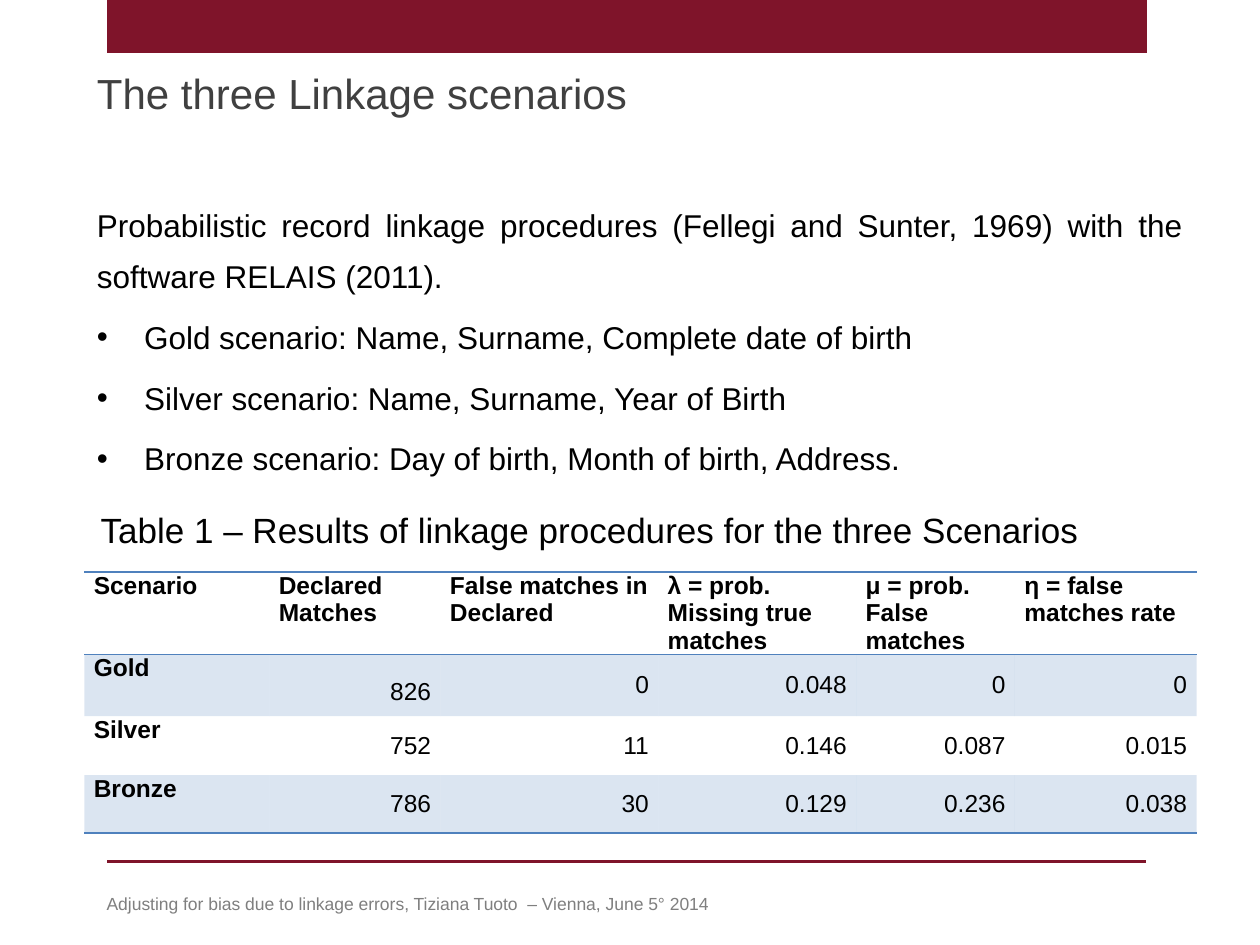
import pptx
import pptx.util
import pptx.dml.color
import pptx.enum.shapes
import pptx.enum.text
import pptx.oxml.ns
from dataclasses import dataclass
from lxml import etree
from pptx.util import Cm, Pt

Align = pptx.enum.text.PP_ALIGN
Anchor = pptx.enum.text.MSO_ANCHOR


@dataclass(frozen=True)
class Theme:
    font: str = "Arial"
    crimson: str = "7F142A"
    blue: str = "4F81BD"
    white: str = "FFFFFF"
    black: str = "000000"
    title_grey: str = "404040"
    footer_grey: str = "7F7F7F"
    title_size: int = 24
    caption_size: int = 20
    body_size: int = 18
    table_size: int = 14
    footer_size: int = 10


theme = Theme()

# Content
TITLE = "The three Linkage scenarios"
INTRO = ("Probabilistic record linkage procedures (Fellegi and Sunter, 1969) "
         "with the software RELAIS (2011).")
SCENARIOS = [
    "Gold scenario: Name, Surname, Complete date of birth",
    "Silver scenario: Name, Surname, Year of Birth",
    "Bronze scenario: Day of birth, Month of birth, Address.",
]
CAPTION = "Table 1 – Results of linkage procedures for the three Scenarios"
RESULTS = [
    ["Scenario", "Declared Matches", "False matches in Declared",
     "λ = prob. Missing true matches", "μ = prob. False matches",
     "η = false matches rate"],
    ["Gold", "826", "0", "0.048", "0", "0"],
    ["Silver", "752", "11", "0.146", "0.087", "0.015"],
    ["Bronze", "786", "30", "0.129", "0.236", "0.038"],
]
COLUMN_WIDTHS = [3.73, 3.45, 4.39, 3.99, 3.2, 3.66]
ROW_HEIGHTS = [1.57, 1.24, 1.19, 1.17]
FOOTER = "Adjusting for bias due to linkage errors, Tiziana Tuoto  – Vienna, June 5° 2014"


def colour(code):
    return pptx.dml.color.RGBColor.from_string(code)


def add_element(parent, tag, **attributes):
    return etree.SubElement(parent, pptx.oxml.ns.qn(tag), attributes)


def write(para, text, *, size, color=theme.black, bold=False, align=Align.LEFT,
          spacing=None, after=None):
    para.alignment = align
    para.space_before = Pt(0)
    if spacing is not None:
        para.line_spacing = spacing
    if after is not None:
        para.space_after = after
    span = para.add_run()
    span.text = text
    span.font.name = theme.font
    span.font.size = Pt(size)
    span.font.bold = bold
    span.font.color.rgb = colour(color)


def place(box, left, top, width, height):
    box.left, box.top, box.width, box.height = Cm(left), Cm(top), Cm(width), Cm(height)


def set_bullet(para, indent):
    properties = para._p.get_or_add_pPr()
    properties.set("marL", str(indent))
    properties.set("indent", str(-indent))
    if indent:
        add_element(properties, "a:buFont", typeface=theme.font)
        add_element(properties, "a:buChar", char="•")
    else:
        add_element(properties, "a:buNone")


def set_borders(cell, ruled):
    properties = cell._tc.get_or_add_tcPr()
    for side in "LRTB":
        line = add_element(properties, f"a:ln{side}", w=str(Pt(1)))
        if side in ruled:
            fill = add_element(line, "a:solidFill")
            add_element(fill, "a:srgbClr", val=theme.blue)
        else:
            add_element(line, "a:noFill")


def fill_cell(cell, banded):
    if not banded:
        cell.fill.background()
        return
    cell.fill.solid()
    cell.fill.fore_color.rgb = colour(theme.blue)
    shade = cell._tc.tcPr.find(".//" + pptx.oxml.ns.qn("a:solidFill") + "[last()]/"
                               + pptx.oxml.ns.qn("a:srgbClr"))
    for shade in cell._tc.tcPr.findall(pptx.oxml.ns.qn("a:solidFill") + "/"
                                       + pptx.oxml.ns.qn("a:srgbClr")):
        add_element(shade, "a:alpha", val="20000")


def add_label(page, text, left, top, width, height, **style):
    box = page.shapes.add_textbox(Cm(left), Cm(top), Cm(width), Cm(height))
    box.text_frame.word_wrap = True
    box.text_frame.auto_size = pptx.enum.text.MSO_AUTO_SIZE.SHAPE_TO_FIT_TEXT
    write(box.text_frame.paragraphs[0], text, **style)


def add_frame(page):
    bar = page.shapes.add_shape(pptx.enum.shapes.MSO_SHAPE.RECTANGLE,
                                Cm(2.16), Cm(0), Cm(20.96), Cm(1.07))
    bar.shadow.inherit = False
    bar.fill.solid()
    bar.fill.fore_color.rgb = colour(theme.crimson)
    bar.line.fill.background()
    rule = page.shapes.add_connector(pptx.enum.shapes.MSO_CONNECTOR.STRAIGHT,
                                     Cm(2.16), Cm(17.37), Cm(23.11), Cm(17.37))
    rule.line.color.rgb = colour(theme.crimson)
    rule.line.width = Pt(2)
    add_element(rule._element.spPr, "a:effectLst")


def fill_placeholders(page):
    title = page.shapes.title
    place(title, 1.7, 1.24, 22.43, 1.27)
    title.text_frame.vertical_anchor = Anchor.TOP
    write(title.text_frame.paragraphs[0], TITLE, size=theme.title_size,
          color=theme.title_grey)

    body = page.placeholders[1]
    place(body, 1.7, 3.73, 22.4, 5.94)
    body.fill.solid()
    body.fill.fore_color.rgb = colour(theme.white)
    frame = body.text_frame
    frame.vertical_anchor = Anchor.MIDDLE
    frame.margin_bottom = Cm(0)
    for index, text in enumerate([INTRO] + SCENARIOS):
        para = frame.add_paragraph() if index else frame.paragraphs[0]
        set_bullet(para, Cm(0.95) if index else 0)
        write(para, text, size=theme.body_size, align=Align.JUSTIFY,
              spacing=Pt(28.8), after=Pt(6))


def add_results(page):
    table = page.shapes.add_table(
        len(RESULTS), len(RESULTS[0]), Cm(1.7), Cm(11.53),
        Cm(sum(COLUMN_WIDTHS)), Cm(sum(ROW_HEIGHTS))).table
    table.first_row = table.horz_banding = False
    for column, width in zip(table.columns, COLUMN_WIDTHS):
        column.width = Cm(width)
    for row, height in zip(table.rows, ROW_HEIGHTS):
        row.height = Cm(height)

    last = len(RESULTS) - 1
    rules = {0: "TB", 1: "T", last: "B"}
    for r, values in enumerate(RESULTS):
        for c, text in enumerate(values):
            cell = table.cell(r, c)
            heading = r == 0 or c == 0
            cell.margin_left = cell.margin_right = Cm(0.19)
            cell.margin_top = cell.margin_bottom = Cm(0)
            cell.vertical_anchor = Anchor.TOP if heading else Anchor.MIDDLE
            set_borders(cell, rules.get(r, ""))
            fill_cell(cell, banded=r % 2 == 1)
            write(cell.text_frame.paragraphs[0], text, size=theme.table_size,
                  bold=heading, align=Align.LEFT if heading else Align.RIGHT,
                  spacing=1.5 if (r, c) == (1, 1) else None)


def main():
    deck = pptx.Presentation()
    deck.slide_width, deck.slide_height = Cm(25.4), Cm(19.05)
    page = deck.slides.add_slide(deck.slide_layouts[1])
    add_frame(page)
    fill_placeholders(page)
    add_results(page)
    add_label(page, CAPTION, 1.78, 10.13, 22.73, 1.12, size=theme.caption_size)
    add_label(page, FOOTER, 1.9, 17.88, 13.9, 0.69, size=theme.footer_size,
              color=theme.footer_grey)
    deck.save("out.pptx")


if __name__ == "__main__":
    main()
